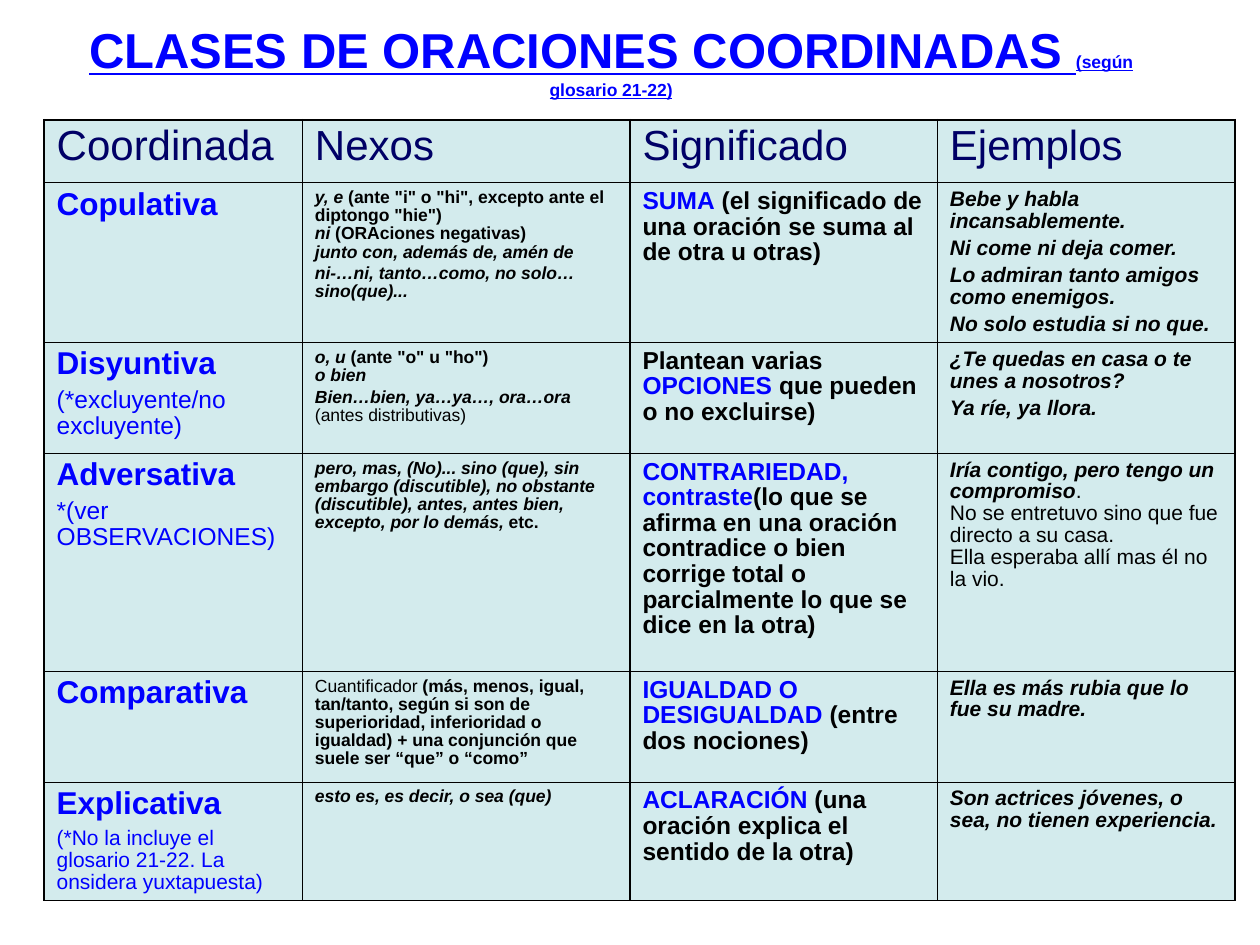
from dataclasses import dataclass
from lxml.etree import SubElement as Sub
from pptx import Presentation
from pptx.dml.color import RGBColor as RGB
from pptx.enum.text import MSO_ANCHOR as Anchor, MSO_AUTO_SIZE as Auto, PP_ALIGN as Align
from pptx.oxml.ns import qn
from pptx.util import Inches, Pt


@dataclass(frozen=True)
class Theme:
    font: str = "Arial"
    blue: str = "0000FF"
    navy: str = "000066"
    black: str = "000000"
    fill: str = "D3EBED"
    title: int = 28
    head: int = 24
    kind: int = 18
    sense: int = 14
    case: int = 12
    link: int = 10
    lead: float = 0.93
    outer: float = 1.08
    inner: float = 0.75


T = Theme()
WIDE, HIGH = 10, 7.5
LEFT, TOP = 0.35, 0.95
COLS = [2.05, 2.6, 2.44, 2.36]
ROWS = [0.5, 1.18, 0.88, 1.73, 0.88, 0.82]


# Text parts: a run is (text, style, colour), a paragraph is (size, gap, runs)
def plain(text, color=T.black):
    return text, "", color


def bold(text, color=T.black):
    return text, "b", color


def slant(text):
    return text, "bi", T.black


def para(size, *runs, gap=0):
    return size, gap, runs


def kind(name, note=None, size=T.sense):
    first = [para(T.kind, bold(name, T.blue))]
    return first + ([para(size, plain(note, T.blue), gap=4)] if note else [])


def link(*runs, gap=0):
    return para(T.link, *runs, gap=gap)


def sense(*runs):
    return [para(T.sense, *runs)]


def cases(*lines):
    return [para(T.case, slant(line), gap=3 if n else 0)
            for n, line in enumerate(lines)]


HEAD = [[para(T.head, plain(name, T.navy))]
        for name in ("Coordinada", "Nexos", "Significado", "Ejemplos")]

BODY = [
    [kind("Copulativa"),
     [link(slant("y, e"),
           bold(' (ante "i" o "hi", excepto ante el diptongo "hie")\n'),
           slant("ni"), bold(" (ORAciones negativas)\n"),
           slant("junto con, además de, amén de")),
      link(slant("ni-…ni, tanto…como, no solo…sino(que)..."), gap=2)],
     sense(bold("SUMA", T.blue),
           bold(" (el significado de una oración se suma al de otra u otras)")),
     cases("Bebe y habla incansablemente.", "Ni come ni deja comer.",
           "Lo admiran tanto amigos como enemigos.",
           "No solo estudia si no que.")],
    [kind("Disyuntiva", "(*excluyente/no excluyente)"),
     [link(slant("o, u"), bold(' (ante "o" u "ho") \n'), slant("o bien")),
      link(slant("Bien…bien, ya…ya…, ora…ora "),
           plain("(antes distributivas)"), gap=2)],
     sense(bold("Plantean varias "), bold("OPCIONES ", T.blue),
           bold("que pueden o no excluirse)")),
     cases("¿Te quedas en casa o te unes a nosotros?", "Ya ríe, ya llora.")],
    [kind("Adversativa", "*(ver OBSERVACIONES)"),
     [link(slant("pero, mas, (No)... sino (que), sin embargo (discutible), "
                 "no obstante (discutible), antes, antes bien, excepto, "
                 "por lo demás,"), bold(" etc."))],
     sense(bold("CONTRARIEDAD, contraste", T.blue),
           bold("(lo que se afirma en una oración contradice o bien corrige "
                "total o parcialmente lo que se dice en la otra)")),
     [para(T.case, slant("Iría contigo, pero tengo un compromiso"), plain(".")),
      para(T.case, plain("No se entretuvo sino que fue directo a su casa.")),
      para(T.case, plain("Ella esperaba allí mas él no la vio."))]],
    [kind("Comparativa"),
     [link(plain("Cuantificador "),
           bold("(más, menos, igual, tan/tanto, según si son de superioridad, "
                "inferioridad o igualdad) + una conjunción que suele ser "
                "“que” o “como”"))],
     sense(bold("IGUALDAD O DESIGUALDAD ", T.blue), bold("(entre dos nociones)")),
     cases("Ella es más rubia que lo fue su madre.")],
    [kind("Explicativa",
          "(*No la incluye el glosario 21-22. La onsidera yuxtapuesta)", T.case),
     [link(slant("esto es, es decir, o sea (que)"))],
     sense(bold("ACLARACIÓN", T.blue),
           bold(" (una oración explica el sentido de la otra)")),
     cases("Son actrices jóvenes, o sea, no tienen experiencia.")],
]


def add_run(par, text, style, color, size):
    for n, part in enumerate(text.split("\n")):
        if n:  # a break keeps the size of its line
            par.add_line_break()
            Sub(par._p[-1], qn("a:rPr"), sz=str(size * 100))
        if part:
            run = par.add_run()
            run.text = part
            font = run.font
            font.name, font.size = T.font, Pt(size)
            font.bold, font.italic = "b" in style, "i" in style
            font.underline = "u" in style
            font.color.rgb = RGB.from_string(color)


def add_edge(cell, side, width):
    line = Sub(cell._tc.get_or_add_tcPr(), qn("a:ln" + side), w=str(Pt(width)))
    Sub(Sub(line, qn("a:solidFill")), qn("a:srgbClr"), val=T.black)


def fill_cell(cell, paras, outer):
    for side in "LRTB":
        add_edge(cell, side, T.outer if side in outer else T.inner)
    cell.fill.solid()
    cell.fill.fore_color.rgb = RGB.from_string(T.fill)
    frame = cell.text_frame
    for n, (size, gap, runs) in enumerate(paras):
        par = frame.add_paragraph() if n else frame.paragraphs[0]
        par.line_spacing, par.space_before = T.lead, Pt(gap)
        for run in runs:
            add_run(par, *run, size)


def add_title(slide):
    box = slide.shapes.title
    box.left, box.top = Inches(LEFT), 0
    box.width, box.height = Inches(0.9 * WIDE), Inches(TOP)
    frame = box.text_frame
    frame.auto_size, frame.word_wrap = Auto.NONE, True
    frame.vertical_anchor = Anchor.MIDDLE
    par = frame.paragraphs[0]
    par.alignment = Align.CENTER
    add_run(par, "CLASES DE ORACIONES COORDINADAS ", "bu", T.blue, T.title)
    add_run(par, "(según glosario 21-22)", "bu", T.blue, T.link)


def add_grid(slide):
    rows = [HEAD] + BODY
    grid = slide.shapes.add_table(
        len(ROWS), len(COLS), Inches(LEFT), Inches(TOP),
        Inches(sum(COLS)), Inches(sum(ROWS))).table
    grid.first_row = grid.horz_banding = False
    for col, width in zip(grid.columns, COLS):
        col.width = Inches(width)
    for row, height in zip(grid.rows, ROWS):
        row.height = Inches(height)
    for r, row in enumerate(rows):
        for c, paras in enumerate(row):
            # Only the left, right and top rims are heavier
            rim = {"L": c == 0, "R": c == len(COLS) - 1, "T": r == 0}
            fill_cell(grid.cell(r, c), paras, [s for s in rim if rim[s]])


def main():
    deck = Presentation()
    deck.slide_width, deck.slide_height = Inches(WIDE), Inches(HIGH)
    slide = deck.slides.add_slide(deck.slide_layouts[5])
    add_title(slide)
    add_grid(slide)
    deck.save("out.pptx")


if __name__ == "__main__":
    main()
